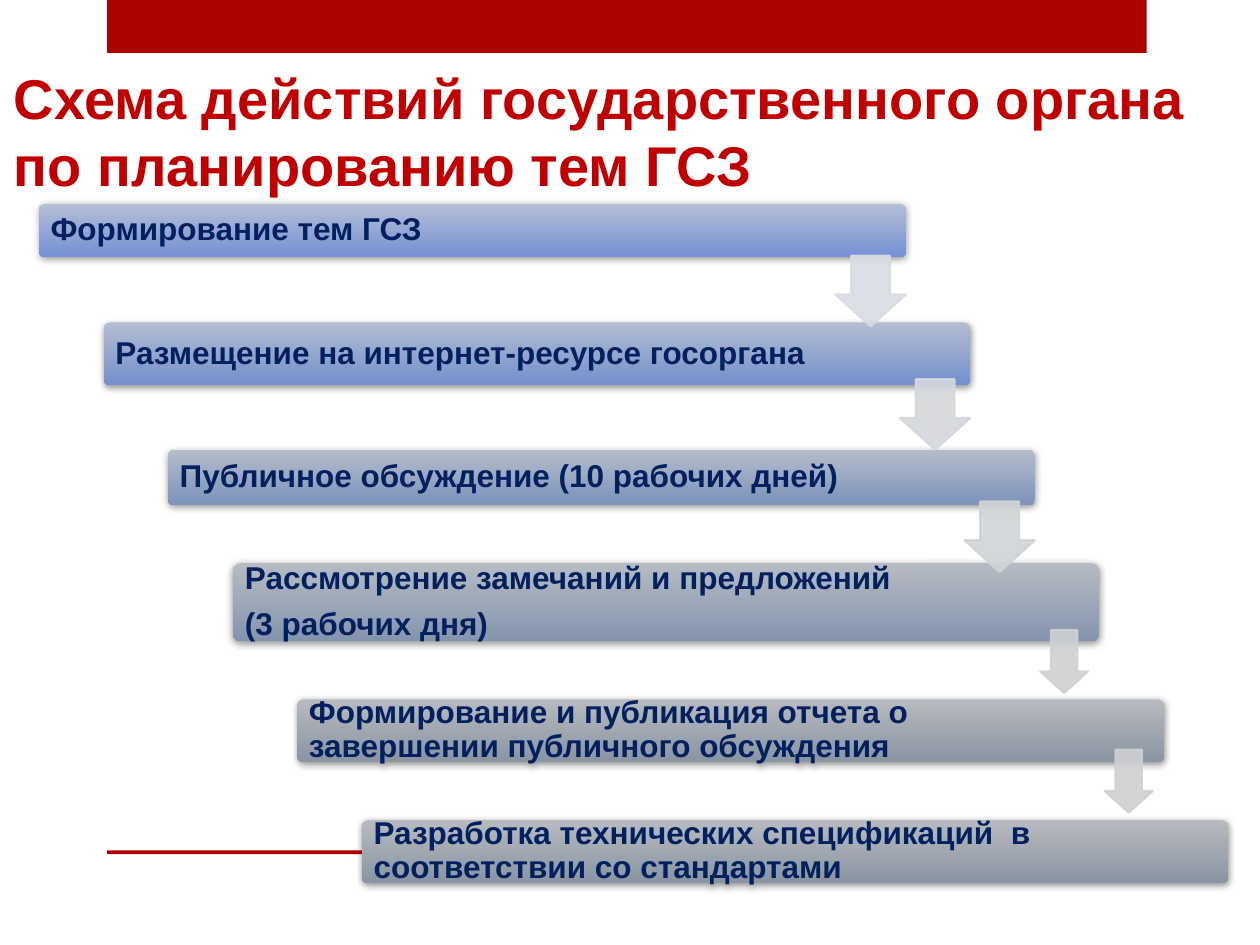
from dataclasses import dataclass

from lxml import etree
from pptx import Presentation
from pptx.dml.color import RGBColor
from pptx.enum.shapes import MSO_SHAPE
from pptx.enum.text import MSO_ANCHOR, MSO_AUTO_SIZE, PP_ALIGN
from pptx.oxml.ns import qn
from pptx.util import Inches, Pt

RECT = MSO_SHAPE.RECTANGLE
ROUNDED = MSO_SHAPE.ROUNDED_RECTANGLE
DOWN_ARROW = MSO_SHAPE.DOWN_ARROW
LEFT = PP_ALIGN.LEFT
MIDDLE, BOTTOM = MSO_ANCHOR.MIDDLE, MSO_ANCHOR.BOTTOM
TITLE_ONLY = 5


@dataclass(frozen=True)
class Theme:
    font: str = "Arial"
    title_size: int = 32
    step_size: int = 18
    title: str = "C00000"
    step_text: str = "002060"
    band: str = "AD0101"


THEME = Theme()
SLIDE_W, SLIDE_H = 10, 7.5

# The staircase: each step moves one column to the right
FIRST_LEFT, LAST_LEFT = 0.31, 2.87
BAR_W = 6.88
ARROW_INSET = 0.28  # from a bar's right edge to its arrow's centre

# top, height, gradient from, gradient to, paragraphs
STEPS = [
    (1.62, 0.42, "B4BED5", "7590D4", ["Формирование тем ГСЗ"]),
    (2.56, 0.50, "B3BCD1", "7490CC", ["Размещение на интернет-ресурсе госоргана"]),
    (3.57, 0.44, "B4BCCA", "7D93BB", ["Публичное обсуждение (10 рабочих дней)"]),
    (4.47, 0.62, "B6BBC3", "8594AD",
     ["Рассмотрение замечаний и предложений", "(3 рабочих дня)"]),
    (5.55, 0.50, "B7BABF", "8A94A2",
     ["Формирование и публикация отчета о завершении публичного обсуждения"]),
    (6.51, 0.50, "B7BABF", "8A94A2",
     ["Разработка технических спецификаций  в соответствии со стандартами"]),
]
# top, width, height, colour
ARROWS = [
    (2.03, 0.56, 0.56, "D8DBE2"),
    (3.01, 0.56, 0.56, "D4D7DD"),
    (3.98, 0.56, 0.56, "D1D4D7"),
    (5.00, 0.38, 0.50, "CFD0D2"),
    (5.95, 0.38, 0.50, "CFD0D2"),
]


def rgb(color):
    return RGBColor.from_string(color)


def step_left(i):
    return FIRST_LEFT + i * (LAST_LEFT - FIRST_LEFT) / (len(STEPS) - 1)


def add_shape(s, kind, left, top, width, height):
    sp = s.shapes.add_shape(kind, *map(Inches, (left, top, width, height)))
    sp.shadow.inherit = False
    sp.line.fill.background()
    return sp


def add_alpha(color_parent, percent):
    """Set the opacity of the colour held by an XML element."""
    color = color_parent.find(".//" + qn("a:srgbClr"))
    etree.SubElement(color, qn("a:alpha"), val=str(percent * 1000))


def add_soft_shadow(sp):
    effects = sp._element.spPr.find(qn("a:effectLst"))
    shadow = etree.SubElement(
        effects, qn("a:outerShdw"), blurRad=str(Pt(4)), dist=str(Pt(1)),
        dir=str(88 * 60000), rotWithShape="0")
    etree.SubElement(shadow, qn("a:srgbClr"), val="000000")
    add_alpha(shadow, 40)


def format_paragraph(p, size, color):
    p.alignment = LEFT
    p.font.name = THEME.font
    p.font.size = Pt(size)
    p.font.bold = True
    p.font.color.rgb = rgb(color)


def set_margins(tf, left, right, vertical):
    tf.margin_left, tf.margin_right = Inches(left), Inches(right)
    tf.margin_top = tf.margin_bottom = Inches(vertical)


def add_band(s, top, height):
    band = add_shape(s, RECT, 0.085 * SLIDE_W, top, 0.825 * SLIDE_W, height)
    band.fill.solid()
    band.fill.fore_color.rgb = rgb(THEME.band)


def set_title(s, text):
    title = s.shapes.title
    title.left, title.top = 0, Inches(0.05)
    title.width, title.height = Inches(SLIDE_W), Inches(1.58)
    tf = title.text_frame
    tf.text = text
    tf.word_wrap = True
    tf.auto_size = MSO_AUTO_SIZE.NONE
    tf.vertical_anchor = BOTTOM
    set_margins(tf, 0.11, 0.11, 0.06)
    format_paragraph(tf.paragraphs[0], THEME.title_size, THEME.title)


def add_step(s, i, top, height, color_from, color_to, lines):
    bar = add_shape(s, ROUNDED, step_left(i), top, BAR_W, height)
    bar.adjustments[0] = 0.1
    bar.fill.gradient()
    bar.fill.gradient_angle = 270
    for stop, color in zip(bar.fill.gradient_stops, (color_from, color_to)):
        stop.color.rgb = rgb(color)
    add_soft_shadow(bar)

    tf = bar.text_frame
    tf.text = "\n".join(lines)
    tf.word_wrap = True
    tf.vertical_anchor = MIDDLE
    set_margins(tf, 0.08, 1.16, 0)
    for p in tf.paragraphs:
        format_paragraph(p, THEME.step_size, THEME.step_text)
        p.line_spacing = 0.9
    for p in tf.paragraphs[:-1]:
        p.space_after = Pt(6.3)


def add_arrow(s, i, top, width, height, color):
    center = step_left(i) + BAR_W - ARROW_INSET
    arrow = add_shape(s, DOWN_ARROW, center - width / 2, top, width, height)
    arrow.adjustments[0], arrow.adjustments[1] = 0.55, 0.45
    arrow.line.width = Pt(1.25)
    for fill in (arrow.fill, arrow.line.fill):
        fill.solid()
        fill.fore_color.rgb = rgb(color)
    spPr = arrow._element.spPr
    for parent in (spPr.find(qn("a:solidFill")), spPr.find(qn("a:ln"))):
        add_alpha(parent, 90)


def main():
    prs = Presentation()
    prs.slide_width, prs.slide_height = Inches(SLIDE_W), Inches(SLIDE_H)
    s = prs.slides.add_slide(prs.slide_layouts[TITLE_ONLY])
    add_band(s, 0, 0.42)
    add_band(s, 6.75, 0.03)
    set_title(s, "Схема действий государственного органа по планированию тем ГСЗ")
    for i, step in enumerate(STEPS):
        add_step(s, i, *step)
    for i, arrow in enumerate(ARROWS):
        add_arrow(s, i, *arrow)
    prs.save("out.pptx")


if __name__ == "__main__":
    main()
